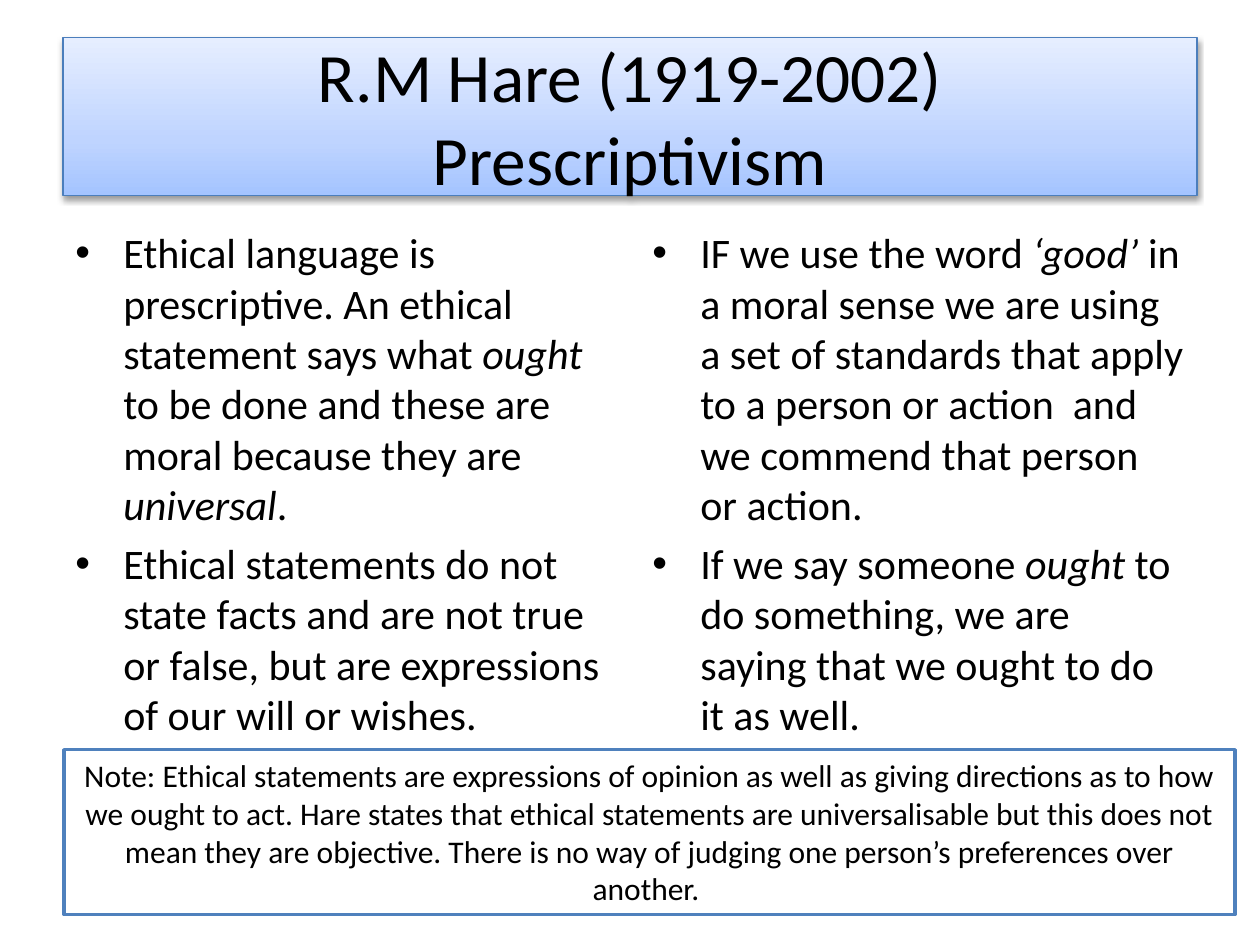
from lxml import etree
from pptx import Presentation
from pptx.dml.color import RGBColor
from pptx.enum import shapes, text
from pptx.oxml import parse_xml
from pptx.oxml.ns import qn
from pptx.util import Inches, Pt

# Content: runs between asterisks are italic
HEAD = ["R.M Hare (1919-2002)", "Prescriptivism"]
COLS = [
    ["Ethical language is prescriptive. An ethical statement says what *ought* to be "
     "done and these are moral because they are *universal*.",
     "Ethical statements do not state facts and are not true or false, but are "
     "expressions of our will or wishes."],
    ["IF we use the word *‘good’* in a moral sense we are using a set of standards that "
     "apply to a person or action  and we commend that person or action.",
     "If we say someone *ought* to do something, we are saying that we ought to do it "
     "as well."],
]
NOTE = ("Note: Ethical statements are expressions of opinion as well as giving directions "
        "as to how we ought to act. Hare states that ethical statements are universalisable "
        "but this does not mean they are objective. There is no way of judging one person’s "
        "preferences over another. ")
HUE = {"ink": "000000", "paper": "FFFFFF", "edge": "4B7EBC", "frame": "4F81BD"}
FADE = [(0, "A4C4FF"), (35, "BFD4FF"), (100, "E6EEFF")]
NS = 'xmlns:a="http://schemas.openxmlformats.org/drawingml/2006/main"'
LEFT, WIDE, GAP = 0.5, 9, 0.16


def color(name):
    return RGBColor.from_string(HUE[name])


def write(par, line, size, align=text.PP_ALIGN.LEFT, bullet=False):
    """Add text to a paragraph; a newline becomes a line break."""
    par.alignment = align
    for i, row in enumerate(line.split("\n")):
        if i:
            par.add_line_break()
            brk = par._p.findall(qn("a:br"))[-1]
            etree.SubElement(brk, qn("a:rPr"), sz=str(round(size * 100)))
        for j, part in enumerate(row.split("*")):
            if part:
                run = par.add_run()
                run.text = part
                run.font.name, run.font.size = "Calibri", Pt(size)
                run.font.color.rgb = color("ink")
                run.font.italic = j % 2 == 1
    if bullet:
        par.space_before = Pt(size * 0.2)
        props = par._p.get_or_add_pPr()
        props.set("marL", str(Inches(0.38)))
        props.set("indent", str(Inches(-0.38)))
        etree.SubElement(props, qn("a:buFont"), typeface="Arial")
        etree.SubElement(props, qn("a:buChar"), char="•")


deck = Presentation()
deck.slide_width, deck.slide_height = Inches(10), Inches(7.5)
page = deck.slides.add_slide(deck.slide_layouts[5])

# Title with gradient and soft shadow
title = page.shapes.title
title.left, title.top = Inches(LEFT), Inches(0.3)
title.width, title.height = Inches(WIDE), Inches(1.25)
title.fill.gradient()
title.fill.gradient_angle = 90
stops = title.fill._fill._gradFill.find(qn("a:gsLst"))
for old in list(stops):
    stops.remove(old)
for pos, shade in FADE:
    stops.append(parse_xml(f'<a:gs {NS} pos="{pos * 1000}"><a:srgbClr val="{shade}"/></a:gs>'))
title.line.color.rgb = color("edge")
title.line.width = Pt(0.75)
title._element.spPr.append(parse_xml(
    f'<a:effectLst {NS}><a:outerShdw blurRad="{Pt(3.1)}" dist="{Pt(1.6)}" dir="5400000" '
    f'rotWithShape="0"><a:srgbClr val="{HUE["ink"]}"><a:alpha val="38000"/></a:srgbClr>'
    '</a:outerShdw></a:effectLst>'))
frame = title.text_frame
frame.auto_size = text.MSO_AUTO_SIZE.NONE
frame.vertical_anchor = text.MSO_ANCHOR.MIDDLE
write(frame.paragraphs[0], "\n".join(HEAD), 39.6, text.PP_ALIGN.CENTER)

# Two bulleted columns
span = (WIDE - GAP) / 2
for i, items in enumerate(COLS):
    box = page.shapes.add_textbox(Inches(LEFT + i * (span + GAP)), Inches(1.75),
                                  Inches(span), Inches(4.95))
    frame = box.text_frame
    frame.word_wrap = True
    for j, item in enumerate(items):
        par = frame.add_paragraph() if j else frame.paragraphs[0]
        write(par, item, 24, bullet=True)

# Framed note
note = page.shapes.add_shape(shapes.MSO_SHAPE.RECTANGLE, Inches(0.51), Inches(5.95),
                             Inches(9.29), Inches(1.31))
note.shadow.inherit = False
note.fill.solid()
note.fill.fore_color.rgb = color("paper")
note.line.color.rgb = color("frame")
note.line.width = Pt(2)
frame = note.text_frame
frame.word_wrap = True
frame.auto_size = text.MSO_AUTO_SIZE.SHAPE_TO_FIT_TEXT
frame.vertical_anchor = text.MSO_ANCHOR.TOP
write(frame.paragraphs[0], NOTE, 18, text.PP_ALIGN.CENTER)

deck.save("out.pptx")
